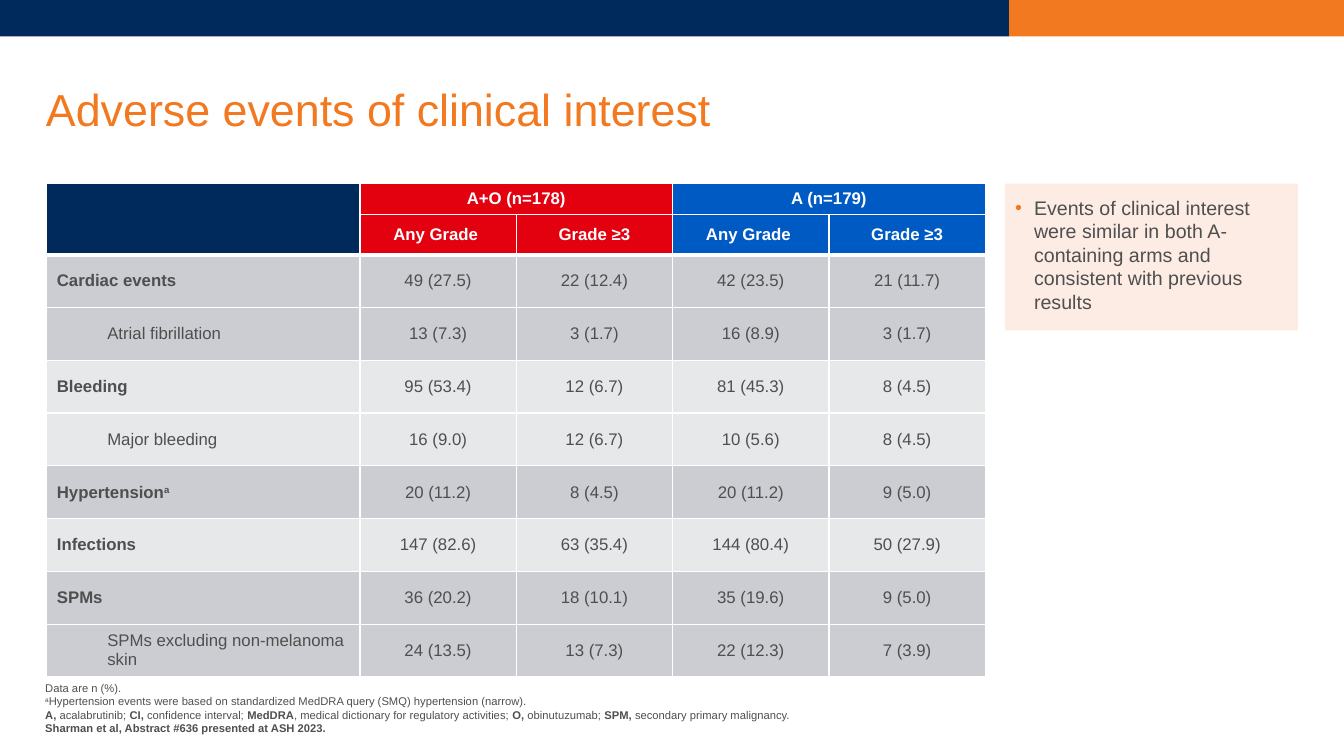
"""Build a slide with a table of adverse events of clinical interest."""
from dataclasses import dataclass
from typing import Any

from lxml import etree
from pptx import Presentation
from pptx.dml.color import RGBColor
from pptx.enum.shapes import MSO_SHAPE
from pptx.enum.text import MSO_ANCHOR, PP_ALIGN
from pptx.oxml.ns import qn
from pptx.util import Cm, Pt

RECTANGLE = MSO_SHAPE.RECTANGLE
TOP, MIDDLE, BOTTOM = MSO_ANCHOR.TOP, MSO_ANCHOR.MIDDLE, MSO_ANCHOR.BOTTOM
LEFT, CENTER = PP_ALIGN.LEFT, PP_ALIGN.CENTER

NAVY, ORANGE, RED, BLUE = "002A5C", "F37920", "E3000F", "005AC4"
WHITE, GRAY_TEXT, PEACH = "FFFFFF", "4E4F4E", "FDECE3"
DARK_BAND, LIGHT_BAND = "CBCDD2", "E7E8EA"
FIRST_COLUMN, VALUE_COLUMN = 7.89, 3.94
HEADER_ROW, BODY_ROW, HEADER_COUNT = 0.77, 1.33, 2


@dataclass(frozen=True)
class Box:
    left: float
    top: float
    width: float
    height: float

    def lengths(self) -> tuple:
        return Cm(self.left), Cm(self.top), Cm(self.width), Cm(self.height)


@dataclass(frozen=True)
class Piece:
    text: str
    bold: bool = False
    superscript: bool = False


@dataclass(frozen=True)
class Event:
    name: str
    values: tuple[str, ...]
    band: str
    indented: bool = False
    note: str = ""


@dataclass(frozen=True)
class Arm:
    name: str
    color: str


ARMS = (Arm("A+O (n=178)", RED), Arm("A (n=179)", BLUE))
GRADES = ("Any Grade ", "Grade ≥3")
EVENTS = (
    Event("Cardiac events", ("49 (27.5)", "22 (12.4)", "42 (23.5)", "21 (11.7)"), DARK_BAND),
    Event("Atrial fibrillation", ("13 (7.3)", "3 (1.7)", "16 (8.9)", "3 (1.7)"), DARK_BAND, True),
    Event("Bleeding", ("95 (53.4)", "12 (6.7)", "81 (45.3)", "8 (4.5)"), LIGHT_BAND),
    Event("Major bleeding", ("16 (9.0)", "12 (6.7)", "10 (5.6)", "8 (4.5)"), LIGHT_BAND, True),
    Event("Hypertension", ("20 (11.2)", "8 (4.5)", "20 (11.2)", "9 (5.0)"), DARK_BAND, note="a"),
    Event("Infections", ("147 (82.6)", "63 (35.4)", "144 (80.4)", "50 (27.9)"), LIGHT_BAND),
    Event("SPMs", ("36 (20.2)", "18 (10.1)", "35 (19.6)", "9 (5.0)"), DARK_BAND),
    Event("SPMs excluding non-melanoma skin",
          ("24 (13.5)", "13 (7.3)", "22 (12.3)", "7 (3.9)"), DARK_BAND, True),
)
FOOTNOTES = (
    (Piece("Data are n (%)."),),
    (Piece("a", superscript=True),
     Piece("Hypertension events were based on standardized MedDRA query (SMQ) hypertension (narrow).")),
    (Piece("A, ", True), Piece("acalabrutinib; "),
     Piece("CI, ", True), Piece("confidence interval; "),
     Piece("MedDRA", True), Piece(", medical dictionary for regulatory activities; "),
     Piece("O, ", True), Piece("obinutuzumab; "),
     Piece("SPM, ", True), Piece("secondary primary malignancy.")),
    (Piece("Sharman et al, Abstract #636 presented at ASH 2023.", True),),
)
CALLOUT = ("Events of clinical interest were similar in both A-containing arms "
           "and consistent with previous results")


def apply_format(target: Any, values: dict) -> None:
    for name, value in values.items():
        setattr(target, name, value)


def paint(fill: Any, color: str) -> None:
    fill.solid()
    fill.fore_color.rgb = RGBColor.from_string(color)


def frame_format(anchor: Any, left: float = 0, top: float = 0,
                 right: float = 0, bottom: float = 0) -> dict:
    return {"word_wrap": True, "vertical_anchor": anchor,
            "margin_left": Cm(left), "margin_top": Cm(top),
            "margin_right": Cm(right), "margin_bottom": Cm(bottom)}


def write(paragraph: Any, pieces: tuple[Piece, ...], size: float, color: str,
          alignment: Any = LEFT) -> None:
    paragraph.alignment = alignment
    for piece in pieces:
        run = paragraph.add_run()
        run.text = piece.text
        apply_format(run.font, {"name": "Arial", "size": Pt(size), "bold": piece.bold})
        run.font.color.rgb = RGBColor.from_string(color)
        if piece.superscript:
            run.font._element.set("baseline", "30000")


def add_rectangle(slide: Any, box: Box, color: str) -> Any:
    shape = slide.shapes.add_shape(RECTANGLE, *box.lengths())
    shape.shadow.inherit = False
    shape.line.fill.background()
    paint(shape.fill, color)
    return shape


def add_text(slide: Any, box: Box, anchor: Any) -> Any:
    frame = slide.shapes.add_textbox(*box.lengths()).text_frame
    apply_format(frame, frame_format(anchor))
    return frame


def style_cell(cell: Any, row: int, color: str) -> None:
    properties = cell._tc.get_or_add_tcPr()
    widths = {"lnL": 1, "lnR": 1,
              "lnT": 3 if row == HEADER_COUNT else 1,
              "lnB": 3 if row == HEADER_COUNT - 1 else 1}
    for side, width in widths.items():
        line = etree.SubElement(properties, qn(f"a:{side}"), w=str(Pt(width)))
        solid = etree.SubElement(line, qn("a:solidFill"))
        etree.SubElement(solid, qn("a:srgbClr"), val=WHITE)
    paint(cell.fill, color)
    cell.vertical_anchor = MIDDLE


def add_event_table(slide: Any, left: float, top: float) -> None:
    value_count = len(ARMS) * len(GRADES)
    row_heights = [HEADER_ROW] * HEADER_COUNT + [BODY_ROW] * len(EVENTS)
    column_widths = [FIRST_COLUMN] + [VALUE_COLUMN] * value_count
    box = Box(left, top, sum(column_widths), sum(row_heights))
    table = slide.shapes.add_table(len(row_heights), len(column_widths), *box.lengths()).table
    apply_format(table, {"first_row": False, "horz_banding": False})
    for column, width in zip(table.columns, column_widths):
        column.width = Cm(width)
    for row, height in zip(table.rows, row_heights):
        row.height = Cm(height)

    def fill_cell(row: int, column: int, pieces: tuple[Piece, ...], band: str,
                  color: str, alignment: Any = CENTER) -> Any:
        cell = table.cell(row, column)
        style_cell(cell, row, band)
        paragraph = cell.text_frame.paragraphs[0]
        write(paragraph, pieces, 12, color, alignment)
        return paragraph

    for row in range(HEADER_COUNT):
        style_cell(table.cell(row, 0), row, NAVY)
    table.cell(0, 0).merge(table.cell(HEADER_COUNT - 1, 0))
    for index in range(value_count):
        arm_index, grade_index = divmod(index, len(GRADES))
        arm, column = ARMS[arm_index], index + 1
        heading = (Piece(arm.name, True),) if grade_index == 0 else ()
        fill_cell(0, column, heading, arm.color, WHITE)
        fill_cell(1, column, (Piece(GRADES[grade_index], True),), arm.color, WHITE)
    for column in range(1, value_count, len(GRADES)):
        table.cell(0, column).merge(table.cell(0, column + len(GRADES) - 1))

    for row, event in enumerate(EVENTS, HEADER_COUNT):
        label = (Piece(event.name, not event.indented),)
        if event.note:
            label += (Piece(event.note, True, True),)
        paragraph = fill_cell(row, 0, label, event.band, GRAY_TEXT, LEFT)
        if event.indented:
            paragraph.level = 1
            paragraph._p.get_or_add_pPr().set("marL", str(Cm(1.27)))
        for column, value in enumerate(event.values, 1):
            fill_cell(row, column, (Piece(value),), event.band, GRAY_TEXT)


def add_callout(slide: Any, box: Box) -> None:
    frame = add_rectangle(slide, box, PEACH).text_frame
    apply_format(frame, frame_format(TOP, 0.25, 0.3, 0.25, 0.13))
    paragraph = frame.paragraphs[0]
    properties = paragraph._p.get_or_add_pPr()
    apply_indent = {"marL": Cm(0.48), "indent": -Cm(0.48)}
    for name, value in apply_indent.items():
        properties.set(name, str(value))
    bullet_color = etree.SubElement(properties, qn("a:buClr"))
    etree.SubElement(bullet_color, qn("a:srgbClr"), val=ORANGE)
    etree.SubElement(properties, qn("a:buFont"), typeface="Arial")
    etree.SubElement(properties, qn("a:buChar"), char="•")
    write(paragraph, (Piece(CALLOUT),), 14, GRAY_TEXT)


def main() -> None:
    presentation = Presentation()
    apply_format(presentation, {"slide_width": Cm(33.87), "slide_height": Cm(19.05)})
    slide = presentation.slides.add_slide(presentation.slide_layouts[6])
    add_rectangle(slide, Box(0, 0, 25.43, 0.92), NAVY)
    add_rectangle(slide, Box(25.43, 0, 8.44, 0.92), ORANGE)
    title = add_text(slide, Box(1.16, 1.6, 31.57, 2.46), MIDDLE).paragraphs[0]
    title.line_spacing = 0.9
    write(title, (Piece("Adverse events of clinical interest"),), 32, ORANGE)
    footnotes = add_text(slide, Box(1.14, 17.45, 23.7, 1.07), BOTTOM)
    for index, pieces in enumerate(FOOTNOTES):
        paragraph = footnotes.add_paragraph() if index else footnotes.paragraphs[0]
        write(paragraph, pieces, 8, GRAY_TEXT)
    add_event_table(slide, 1.18, 4.63)
    add_callout(slide, Box(25.33, 4.63, 7.38, 3.7))
    presentation.save("out.pptx")


if __name__ == "__main__":
    main()
